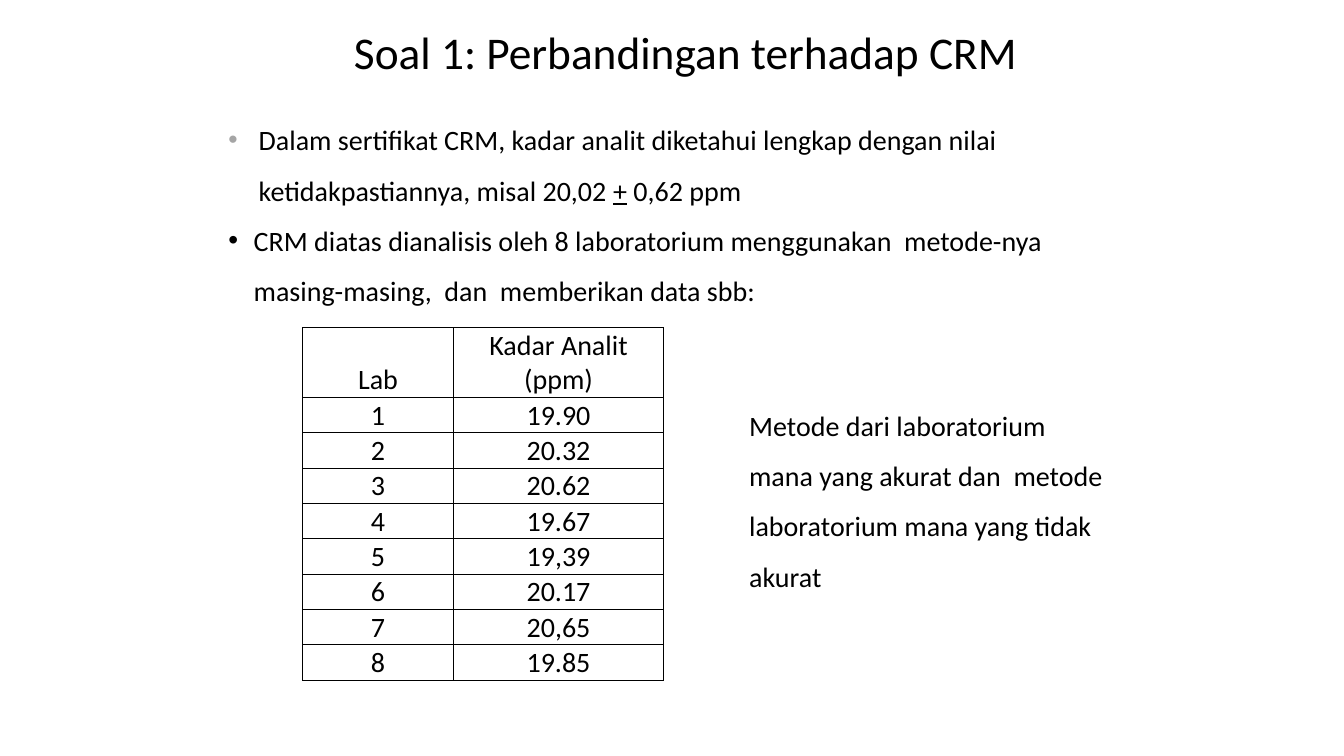
import pptx
import pptx.util
import pptx.dml.color
import pptx.enum.text
import pptx.oxml
import pptx.oxml.ns
from dataclasses import dataclass

Pt = pptx.util.Pt
RGB = pptx.dml.color.RGBColor
ALIGN = pptx.enum.text.PP_ALIGN
ANCHOR = pptx.enum.text.MSO_ANCHOR
AUTO = pptx.enum.text.MSO_AUTO_SIZE


@dataclass(frozen=True)
class Theme:
    font: str = "Calibri"
    ink: str = "000000"
    muted: str = "A5A5A5"
    title_size: float = 32.4
    text_size: float = 20
    text_spacing: float = 1.5
    border: float = 0.5


THEME = Theme()

BULLETS = [
    ([("Dalam sertifikat CRM, kadar analit diketahui lengkap dengan nilai "
       "ketidakpastiannya, misal 20,02 ", False), ("+", True), (" 0,62 ppm", False)],
     21.6, THEME.muted, 95),
    ([("CRM diatas dianalisis oleh 8 laboratorium menggunakan  metode-nya "
       "masing-masing,  dan  memberikan data sbb:", False)],
     18, THEME.ink, 100),
]
LEVELS = ["19.90", "20.32", "20.62", "19.67", "19,39", "20.17", "20,65", "19.85"]
QUESTION = ("Metode dari laboratorium mana yang akurat dan  metode "
            "laboratorium mana yang tidak akurat")


def place(sp, box):
    sp.left, sp.top, sp.width, sp.height = (Pt(v) for v in box)


def style(p, size, align, spacing=1.0):
    p.alignment = align
    p.line_spacing = spacing
    p.space_before = Pt(0)
    p.font.name = THEME.font
    p.font.size = Pt(size)
    p.font.color.rgb = RGB.from_string(THEME.ink)


def add_xml(parent, xml):
    ns = pptx.oxml.ns.nsdecls("a")
    parent.append(pptx.oxml.parse_xml(xml.replace(">", f" {ns}>", 1)))


def set_bullet(p, indent, color, percent):
    pPr = p._p.get_or_add_pPr()
    pPr.set("marL", str(Pt(indent)))
    pPr.set("indent", str(-Pt(indent)))
    add_xml(pPr, f'<a:buClr><a:srgbClr val="{color}"/></a:buClr>')
    add_xml(pPr, f'<a:buSzPct val="{percent * 1000}"></a:buSzPct>')
    add_xml(pPr, '<a:buFont typeface="Arial"></a:buFont>')
    add_xml(pPr, '<a:buChar char="•"></a:buChar>')


def fill_title(sp, box):
    place(sp, box)
    tf = sp.text_frame
    tf.text = " Soal 1: Perbandingan terhadap CRM"
    tf.auto_size = AUTO.NONE
    tf.vertical_anchor = ANCHOR.MIDDLE
    style(tf.paragraphs[0], THEME.title_size, ALIGN.CENTER, 0.9)


def fill_body(sp, box):
    place(sp, box)
    tf = sp.text_frame
    tf.auto_size = AUTO.NONE
    for i, (runs, indent, color, percent) in enumerate(BULLETS):
        p = tf.add_paragraph() if i else tf.paragraphs[0]
        set_bullet(p, indent, color, percent)
        style(p, THEME.text_size, ALIGN.LEFT, THEME.text_spacing)
        for text, underline in runs:
            r = p.add_run()
            r.text = text
            if underline:
                r.font.underline = True


def fill_cell(cell, text):
    cell.text = text
    cell.vertical_anchor = ANCHOR.BOTTOM
    cell.margin_left = cell.margin_right = cell.margin_top = Pt(0.75)
    cell.margin_bottom = Pt(0)
    tcPr = cell._tc.get_or_add_tcPr()
    for side in "LRTB":
        add_xml(tcPr, f'<a:ln{side} w="{Pt(THEME.border)}"><a:solidFill>'
                      f'<a:srgbClr val="{THEME.ink}"/></a:solidFill></a:ln{side}>')
    cell.fill.background()
    for p in cell.text_frame.paragraphs:
        style(p, THEME.text_size, ALIGN.CENTER)


def add_lab_table(slide, box, first_col):
    rows = [("Lab", "Kadar Analit\n(ppm)")]
    rows += [(str(lab), level) for lab, level in enumerate(LEVELS, 1)]
    table = slide.shapes.add_table(len(rows), 2, *(Pt(v) for v in box)).table
    table.first_row = table.horz_banding = False
    table.columns[0].width = Pt(first_col)
    table.columns[1].width = Pt(box[2] - first_col)
    for i, row in enumerate(rows):
        for j, text in enumerate(row):
            fill_cell(table.cell(i, j), text)


def add_question(slide, box):
    tf = slide.shapes.add_textbox(*(Pt(v) for v in box)).text_frame
    tf.word_wrap = True
    tf.auto_size = AUTO.SHAPE_TO_FIT_TEXT
    tf.text = QUESTION
    style(tf.paragraphs[0], THEME.text_size, ALIGN.LEFT, THEME.text_spacing)


def main():
    prs = pptx.Presentation()
    prs.slide_width, prs.slide_height = Pt(960), Pt(540)
    slide = prs.slides.add_slide(prs.slide_layouts[1])
    fill_title(slide.shapes.title, (162, 12, 648, 54))
    fill_body(slide.placeholders[1], (156, 72, 648, 162))
    add_lab_table(slide, (216, 234, 258, 207), 108)
    add_question(slide, (528, 276, 270, 153))
    prs.save("out.pptx")


if __name__ == "__main__":
    main()
